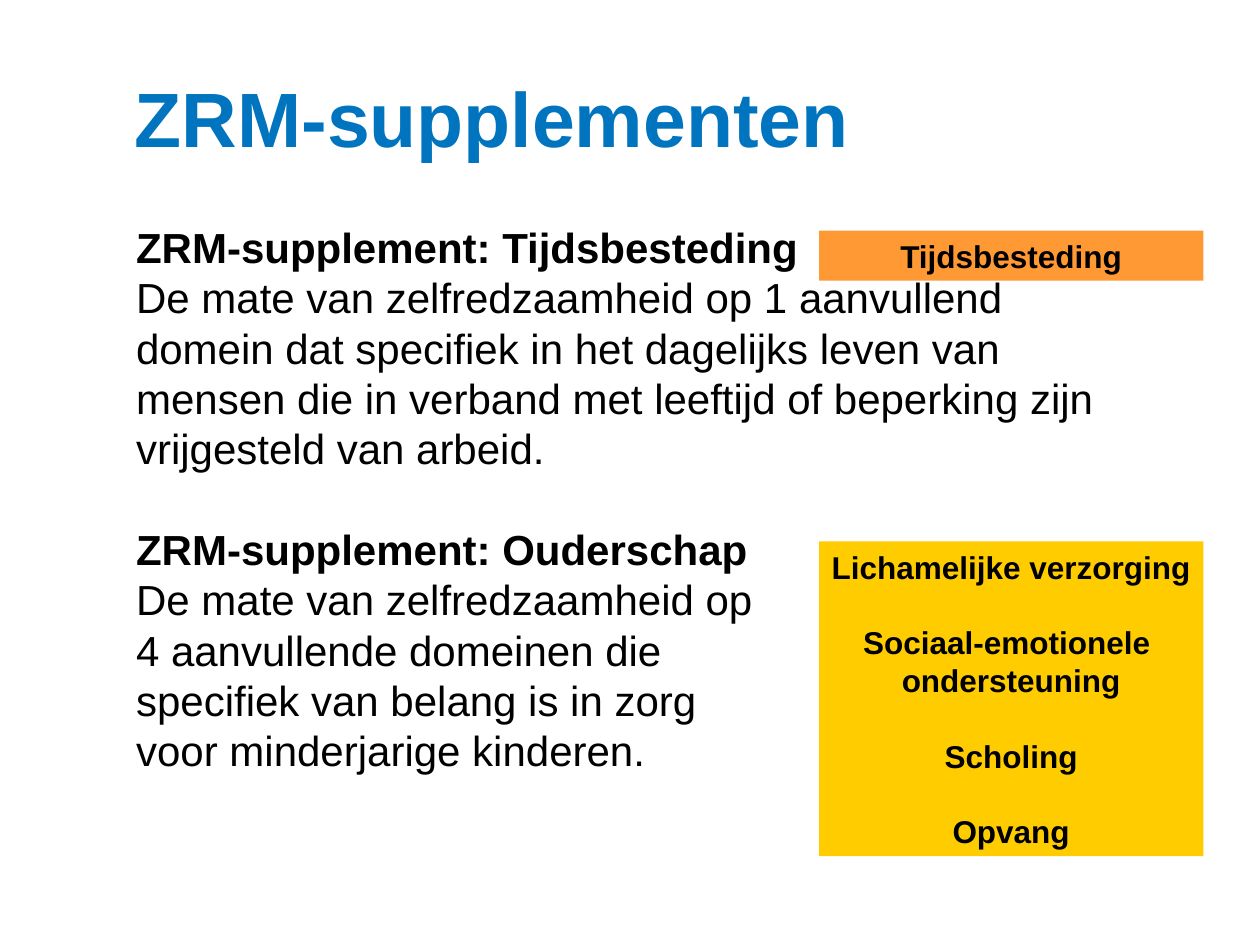
from lxml import etree
from pptx import Presentation
from pptx import util as u
from pptx.dml.color import RGBColor
from pptx.enum import shapes, text
from pptx.oxml.ns import qn

BLUE = RGBColor(0x00, 0x74, 0xBF)
BLACK = RGBColor(0x00, 0x00, 0x00)
ORANGE = RGBColor(0xFF, 0x99, 0x33)
YELLOW = RGBColor(0xFF, 0xCC, 0x00)

deck = Presentation()
deck.slide_width, deck.slide_height = u.Inches(10), u.Inches(7.5)
page = deck.slides.add_slide(deck.slide_layouts[1])


def place(shape, left, top, width, height):
    """Position a shape in shares of the slide's size."""
    shape.left, shape.width = (int(deck.slide_width * share) for share in (left, width))
    shape.top, shape.height = (int(deck.slide_height * share) for share in (top, height))


def write(shape, lines, size, pitch, color, align, anchor, wrap=True):
    """Fill a shape with (text, bold, blank lines above) paragraphs."""
    frame = shape.text_frame
    frame.auto_size = text.MSO_AUTO_SIZE.NONE
    frame.word_wrap = wrap
    frame.vertical_anchor = anchor
    for index, (words, bold, gap) in enumerate(lines):
        para = frame.add_paragraph() if index else frame.paragraphs[0]
        properties = para._p.get_or_add_pPr()
        properties.set("marL", "0")
        properties.set("indent", "0")
        etree.SubElement(properties, qn("a:buNone"))
        para.alignment = align
        para.line_spacing = u.Pt(pitch)
        para.space_before = u.Pt(gap * pitch)
        span = para.add_run()
        span.text = words
        span.font.color.rgb = color
        for name, value in {"name": "Arial", "size": u.Pt(size), "bold": bold}.items():
            setattr(span.font, name, value)


title = page.shapes.title
place(title, 0.097, 0.04, 0.875, 0.167)
write(title, [("ZRM-supplementen", True, 0)], 44, 52.7, BLUE,
      text.PP_ALIGN.LEFT, text.MSO_ANCHOR.MIDDLE)

body = page.placeholders[1]
place(body, 0.098, 0.228, 0.875, 0.66)
write(body, [
    ("ZRM-supplement: Tijdsbesteding", True, 0),
    ("De mate van zelfredzaamheid op 1 aanvullend", False, 0),
    ("domein dat specifiek in het dagelijks leven van", False, 0),
    ("mensen die in verband met leeftijd of beperking zijn vrijgesteld van arbeid.", False, 0),
    ("ZRM-supplement: Ouderschap", True, 1),
    ("De mate van zelfredzaamheid op", False, 0),
    ("4 aanvullende domeinen die", False, 0),
    ("specifiek van belang is in zorg", False, 0),
    ("voor minderjarige kinderen.", False, 0),
], 24, 28.75, BLACK, text.PP_ALIGN.LEFT, text.MSO_ANCHOR.TOP)

domain_boxes = [
    (0.244, 0.053, ORANGE, True, [("Tijdsbesteding", True, 0)]),
    (0.573, 0.333, YELLOW, False, [
        ("Lichamelijke verzorging", True, 0),
        ("Sociaal-emotionele ", True, 1),
        ("ondersteuning", True, 0),
        ("Scholing", True, 1),
        ("Opvang", True, 1),
    ]),
]
for top, height, color, wrap, lines in domain_boxes:
    box = page.shapes.add_shape(shapes.MSO_SHAPE.RECTANGLE, 0, 0, 0, 0)
    place(box, 0.65, top, 0.305, height)
    box.shadow.inherit = False
    box.fill.solid()
    box.fill.fore_color.rgb = color
    box.line.fill.background()
    write(box, lines, 18, 21.6, BLACK, text.PP_ALIGN.CENTER, text.MSO_ANCHOR.TOP, wrap)

deck.save("out.pptx")
